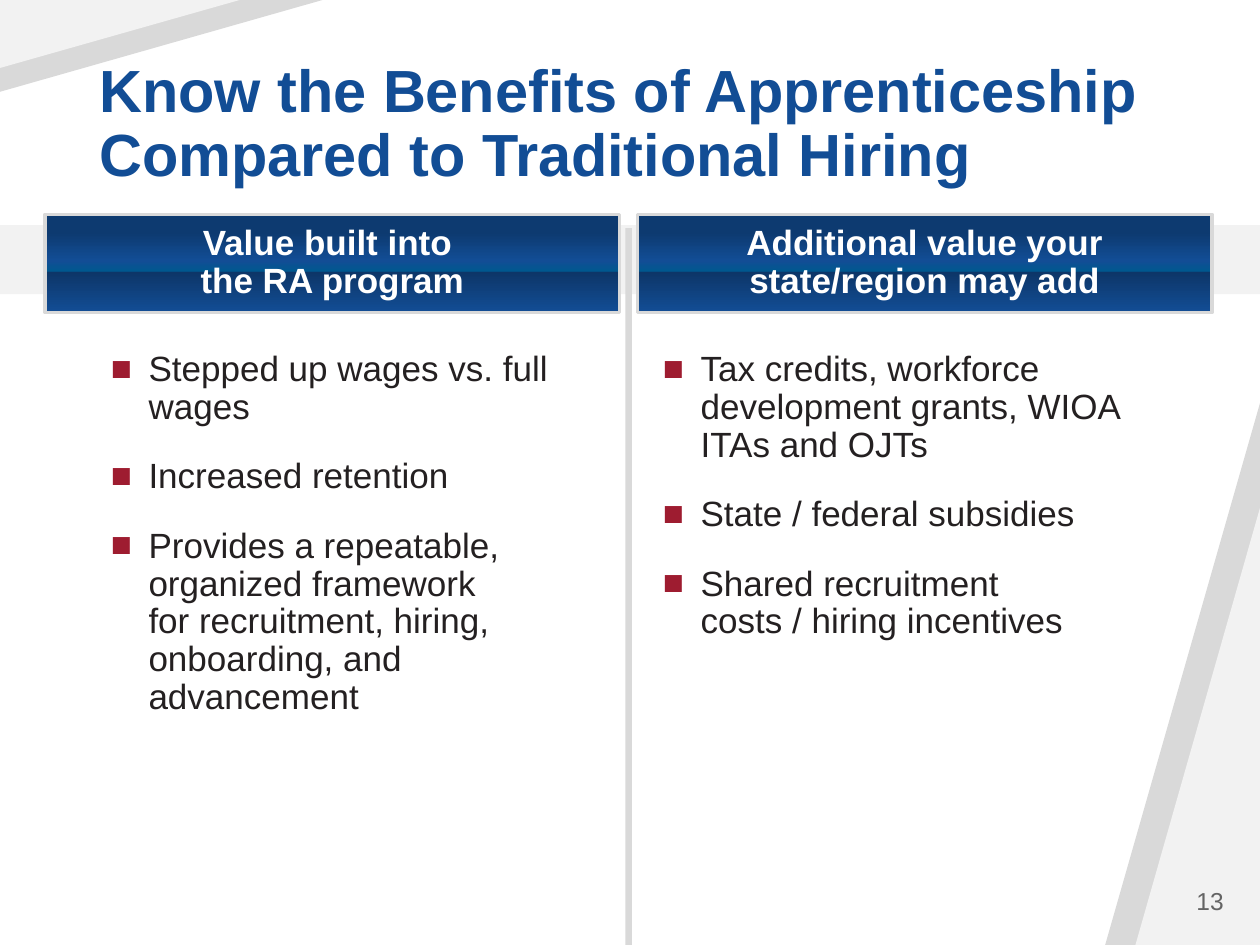
from copy import deepcopy
from dataclasses import dataclass

from lxml.etree import SubElement
from pptx import Presentation
from pptx.dml.color import RGBColor as RGB
from pptx.enum.shapes import MSO_SHAPE as Shape
from pptx.enum.text import MSO_ANCHOR as Anchor, MSO_AUTO_SIZE as AutoSize, PP_ALIGN as Align
from pptx.oxml.ns import qn
from pptx.util import Cm, Pt


@dataclass(frozen=True)
class Theme:
    font: str = "Arial"
    title: RGB = RGB(0x12, 0x4D, 0x95)
    heading: RGB = RGB(0xFF, 0xFF, 0xFF)
    body: RGB = RGB(0x24, 0x20, 0x21)
    number: RGB = RGB(0x64, 0x64, 0x64)
    dark_gray: RGB = RGB(0xD9, 0xD9, 0xD9)
    light_gray: RGB = RGB(0xF2, 0xF2, 0xF2)
    bullet: str = "9E1C30"
    gradient: tuple = ((19, "0D3A70"), (47, "124D95"), (58, "00588F"),
                       (59, "0D3668"), (100, "124D95"))
    title_size: Pt = Pt(34)
    text_size: Pt = Pt(20)
    number_size: Pt = Pt(14)


theme = Theme()


def place(shape, left, top, width, height):
    """Position a shape, with all lengths in centimetres."""
    shape.left, shape.top = Cm(left), Cm(top)
    shape.width, shape.height = Cm(width), Cm(height)


def style_text(shape, size, color, bold=False, align=Align.LEFT, anchor=Anchor.TOP, spacing=0.9):
    frame = shape.text_frame
    frame.word_wrap = True
    frame.auto_size = AutoSize.NONE
    frame.vertical_anchor = anchor
    for paragraph in frame.paragraphs:
        paragraph.alignment = align
        paragraph.line_spacing = spacing
        paragraph.space_before = Pt(0)
        for run in paragraph.runs:
            run.font.name = theme.font
            run.font.size = size
            run.font.bold = bold
            run.font.color.rgb = color
        # Line breaks need the size of the text around them
        for line_break in paragraph._p.findall(qn("a:br")):
            line_break.append(deepcopy(paragraph.runs[0]._r.rPr))


presentation = Presentation()
presentation.slide_width, presentation.slide_height = Cm(25.4), Cm(19.05)
slide = presentation.slides.add_slide(presentation.slide_layouts.get_by_name("Comparison"))
title, left_heading, left_list, right_heading, right_list = slide.placeholders

# Background decoration: right-angled corners, band behind the headings, divider
decorations = [
    (Shape.ISOSCELES_TRIANGLE, theme.dark_gray, 0, (22.28, 8.13, 3.12, 10.92)),
    (Shape.ISOSCELES_TRIANGLE, theme.light_gray, 0, (22.89, 10.24, 2.51, 8.81)),
    (Shape.ISOSCELES_TRIANGLE, theme.dark_gray, 180, (0, 0, 6.5, 1.85)),
    (Shape.ISOSCELES_TRIANGLE, theme.light_gray, 180, (0, 0, 4.83, 1.37)),
    (Shape.RECTANGLE, theme.light_gray, 0, (0, 4.54, 25.4, 1.39)),
    (Shape.RECTANGLE, theme.dark_gray, 0, (12.61, 4.6, 0.13, 14.45)),
]
for preset, color, rotation, box in decorations:
    shape = slide.shapes.add_shape(preset, *map(Cm, box))
    shape.rotation = rotation
    shape.shadow.inherit = False
    shape.fill.solid()
    shape.fill.fore_color.rgb = color
    shape.line.fill.background()
    if preset == Shape.ISOSCELES_TRIANGLE:
        shape.adjustments[0] = 1

# Bring the placeholders in front of the decoration
for placeholder in list(slide.placeholders):
    slide.shapes._spTree.append(placeholder._element)

place(title, 1.75, 1.02, 21.9, 2.92)
title.text_frame.text = "Know the Benefits of Apprenticeship Compared to Traditional Hiring"
style_text(title, theme.title_size, theme.title, bold=True, anchor=Anchor.BOTTOM)

columns = [
    (left_heading, 0.91, "Value built into \vthe RA program", left_list, 1.98,
     ["Stepped up wages vs. full wages",
      "Increased retention",
      "Provides a repeatable, organized framework \v"
      "for recruitment, hiring, onboarding, and advancement"]),
    (right_heading, 12.85, "Additional value your state/region may add", right_list, 13.11,
     ["Tax credits, workforce development grants, WIOA ITAs and OJTs",
      "State / federal subsidies",
      "Shared recruitment \vcosts / hiring incentives"]),
]
for heading, heading_left, heading_text, bullet_list, list_left, items in columns:
    place(heading, heading_left, 4.32, 11.58, 1.98)
    heading.fill.gradient()
    heading.fill.gradient_angle = 270
    stops = heading._element.spPr.find(qn("a:gradFill")).find(qn("a:gsLst"))
    stops.clear()
    for percent, color in theme.gradient:
        stop = SubElement(stops, qn("a:gs"), pos=str(percent * 1000))
        SubElement(stop, qn("a:srgbClr"), val=color)
    heading.line.color.rgb = theme.dark_gray
    heading.line.width = Pt(2)
    frame = heading.text_frame
    frame.text = heading_text
    frame.margin_left = frame.margin_right = Cm(0.13)
    frame.margin_top = frame.margin_bottom = Cm(0.15)
    style_text(heading, theme.text_size, theme.heading, bold=True,
               align=Align.CENTER, anchor=Anchor.MIDDLE)

    place(bullet_list, list_left, 6.96, 10.41, 10.24)
    frame = bullet_list.text_frame
    for index, item in enumerate(items):
        paragraph = frame.add_paragraph() if index else frame.paragraphs[0]
        paragraph.text = item
        properties = paragraph._p.get_or_add_pPr()
        properties.set("marL", str(Cm(0.76)))
        properties.set("indent", str(Cm(-0.76)))
        bullet_color = SubElement(properties, qn("a:buClr"))
        SubElement(bullet_color, qn("a:srgbClr"), val=theme.bullet)
        SubElement(properties, qn("a:buFont"), typeface=theme.font)
        SubElement(properties, qn("a:buChar"), char="■")
    style_text(bullet_list, theme.text_size, theme.body)
    for paragraph in frame.paragraphs[1:]:
        paragraph.space_before = Pt(18)

page_number = slide.shapes.add_textbox(Cm(21.36), Cm(17.65), Cm(3.56), Cm(1.02))
page_number.text_frame.text = "13"
style_text(page_number, theme.number_size, theme.number,
           align=Align.RIGHT, anchor=Anchor.MIDDLE, spacing=1.0)

presentation.save("out.pptx")
